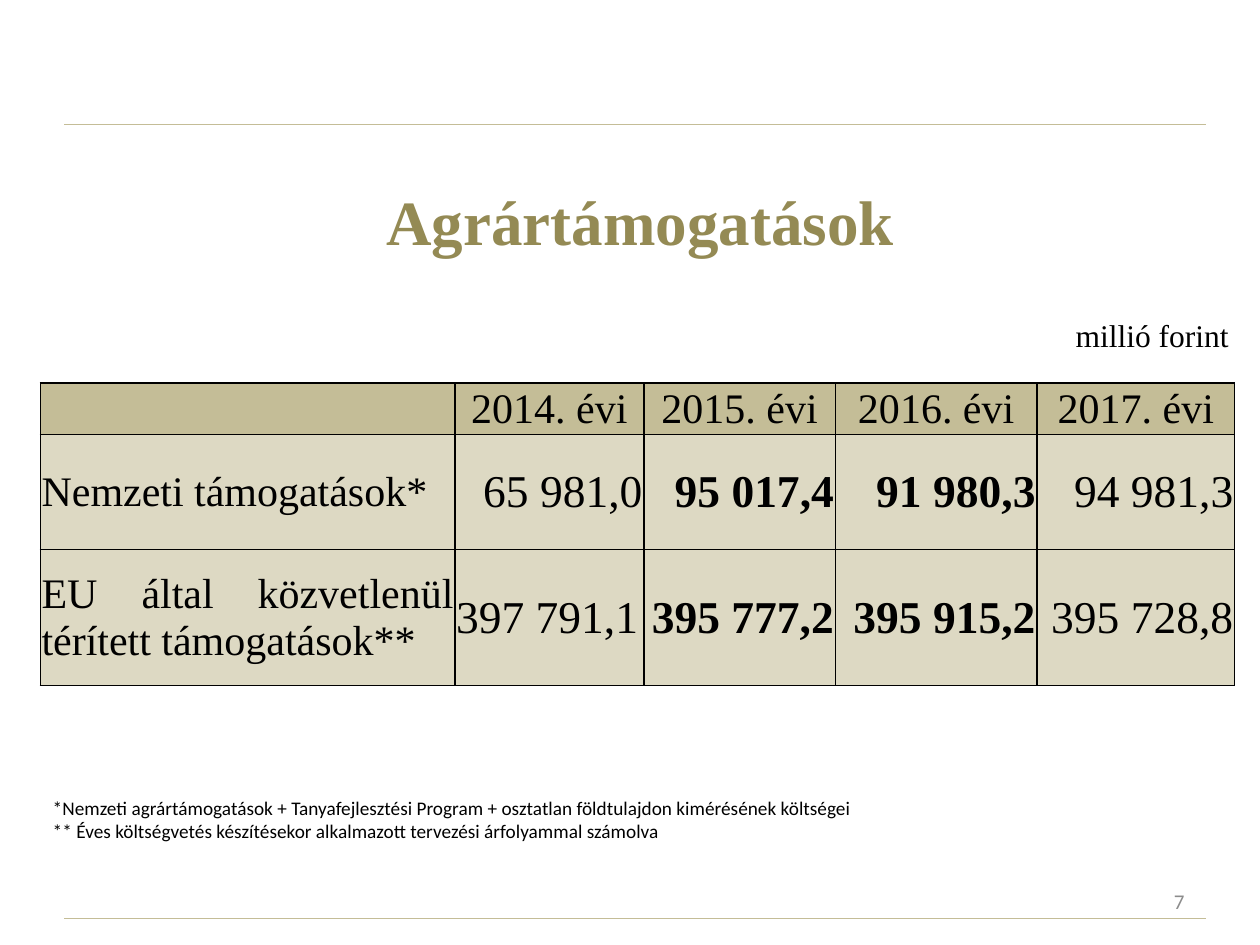
from pptx import Presentation
from pptx.dml.color import RGBColor
from pptx.enum.shapes import MSO_CONNECTOR
from pptx.enum.text import MSO_ANCHOR, PP_ALIGN
from pptx.oxml.ns import qn
from pptx.util import Inches, Pt
from lxml.etree import SubElement

SERIF, SANS = "Times New Roman", "Calibri"
TAN, SAND, OLIVE, GREY, BLACK = "C4BD97", "DDD9C3", "948A54", "8C8C8C", "000000"
LEFT, CENTER, RIGHT, JUSTIFY = (
    PP_ALIGN.LEFT, PP_ALIGN.CENTER, PP_ALIGN.RIGHT, PP_ALIGN.JUSTIFY)


def rgb(value):
    return RGBColor.from_string(value)


class Deck:
    def __init__(self):
        self.prs = Presentation()
        self.prs.slide_width, self.prs.slide_height = Inches(10), Inches(7.5)
        self.slide = self.prs.slides.add_slide(self.prs.slide_layouts[5])

    def set_text(self, tf, text, size, font=SERIF, color=BLACK, bold=False,
                 align=LEFT):
        tf.text = text
        for p in tf.paragraphs:
            p.alignment = align
            for r in p.runs:
                r.font.name, r.font.size, r.font.bold = font, Pt(size), bold
                r.font.color.rgb = rgb(color)

    def title(self, box, text, **style):
        sp = self.slide.shapes.title
        sp.left, sp.top, sp.width, sp.height = map(Inches, box)
        sp.text_frame.vertical_anchor = MSO_ANCHOR.MIDDLE
        self.set_text(sp.text_frame, text, **style)

    def text(self, box, text, anchor=MSO_ANCHOR.TOP, **style):
        tf = self.slide.shapes.add_textbox(*map(Inches, box)).text_frame
        tf.word_wrap = True
        tf.vertical_anchor = anchor
        self.set_text(tf, text, **style)

    def rule(self, y):
        line = self.slide.shapes.add_connector(
            MSO_CONNECTOR.STRAIGHT, Inches(0.51), Inches(y), Inches(9.57), Inches(y))
        line.line.color.rgb = rgb(TAN)
        line.line.width = Pt(0.75)
        SubElement(line._element.spPr, qn("a:effectLst"))

    def cell_style(self, cell, fill):
        """Set margins, black borders and fill, in schema order."""
        cell.margin_left = cell.margin_right = cell.margin_top = Inches(0.01)
        cell.margin_bottom = 0
        cell.vertical_anchor = MSO_ANCHOR.MIDDLE
        tcPr = cell._tc.get_or_add_tcPr()
        for side in ("a:lnL", "a:lnR", "a:lnT", "a:lnB"):
            ln = SubElement(tcPr, qn(side), w=str(Pt(1)))
            SubElement(SubElement(ln, qn("a:solidFill")), qn("a:srgbClr"), val=BLACK)
        cell.fill.solid()
        cell.fill.fore_color.rgb = rgb(fill)

    def table(self, left, top, widths, heights, rows):
        table = self.slide.shapes.add_table(
            len(rows), len(widths), Inches(left), Inches(top),
            Inches(sum(widths)), Inches(sum(heights))).table
        for column, width in zip(table.columns, widths):
            column.width = Inches(width)
        for row, height in zip(table.rows, heights):
            row.height = Inches(height)
        for i, values in enumerate(rows):
            for j, value in enumerate(values):
                cell = table.cell(i, j)
                self.cell_style(cell, SAND if i else TAN)
                number = i > 0 and j > 0
                if (i, j) == (2, 1):
                    align = LEFT
                elif number:
                    align = RIGHT
                else:
                    align = JUSTIFY if i else CENTER
                self.set_text(cell.text_frame, value, size=26 if number else 24,
                              bold=number and j in (2, 3), align=align)


def main():
    deck = Deck()
    for y in (7.29, 0.99):
        deck.rule(y)
    deck.title((0.59, 1.39, 8.98, 0.71), "Agrártámogatások",
               size=36, color=OLIVE, bold=True, align=CENTER)
    deck.table(0.32, 3.04, [3.29, 1.5, 1.52, 1.6, 1.57], [0.41, 0.91, 1.08], [
        ["", "2014. évi", "2015. évi", "2016. évi", "2017. évi"],
        ["Nemzeti támogatások*", "65 981,0", "95 017,4", "91 980,3", "94 981,3"],
        ["EU által közvetlenül térített támogatások**",
         "397 791,1", "395 777,2", "395 915,2", "395 728,8"],
    ])
    deck.text((0.32, 6.27, 9.68, 0.47),
              "*Nemzeti agrártámogatások + Tanyafejlesztési Program + "
              "osztatlan földtulajdon kimérésének költségei\n"
              "** Éves költségvetés készítésekor alkalmazott tervezési "
              "árfolyammal számolva", size=11, font=SANS)
    deck.text((7.17, 6.95, 2.33, 0.4), "7", anchor=MSO_ANCHOR.MIDDLE,
              size=12, font=SANS, color=GREY, align=RIGHT)
    deck.text((0.56, 2.46, 9.29, 0.4), "millió forint", size=18, align=RIGHT)
    deck.prs.save("out.pptx")


if __name__ == "__main__":
    main()
